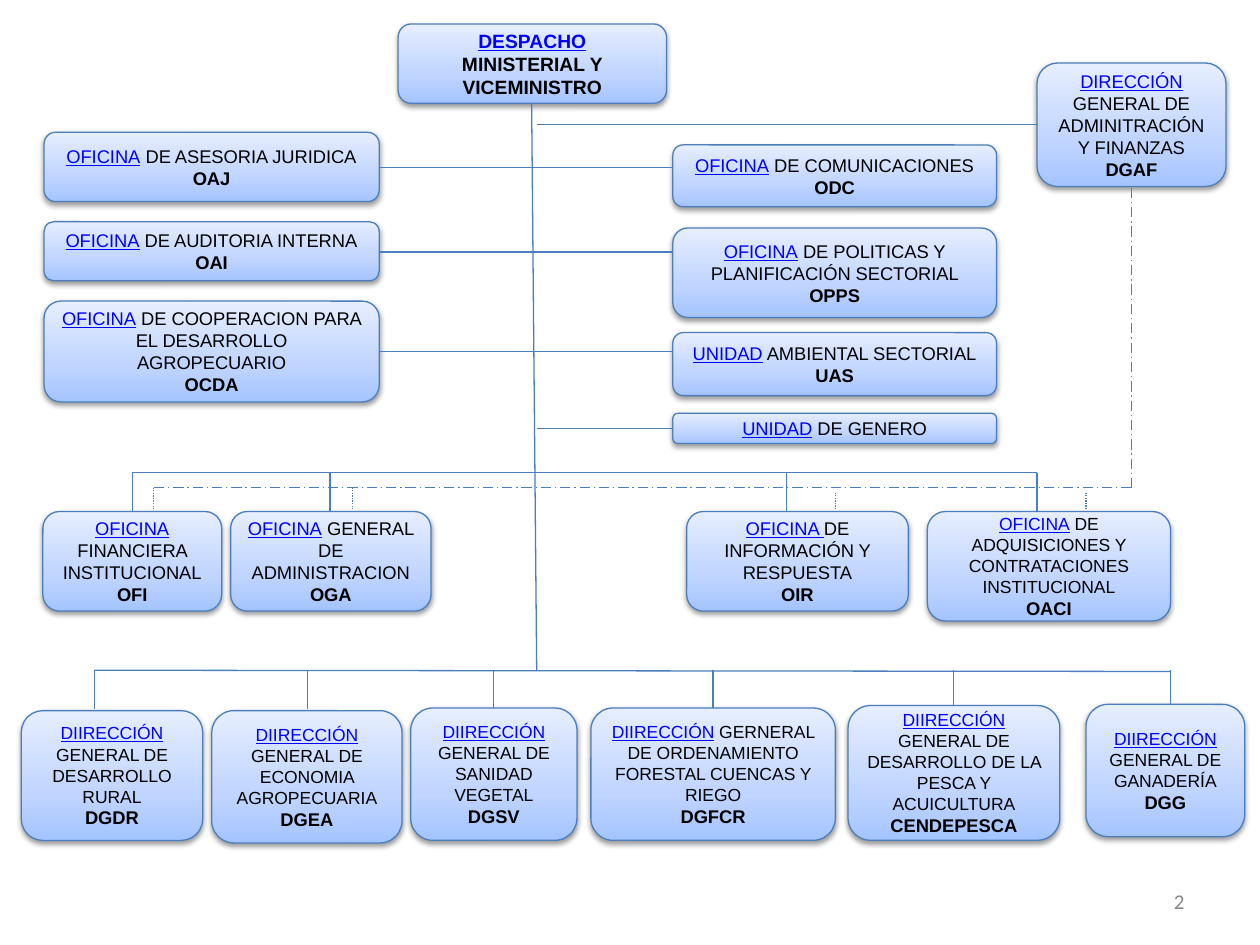
from lxml import etree
from pptx import Presentation
from pptx import util as u
from pptx.dml.color import RGBColor
from pptx.enum import dml, shapes, text
from pptx.oxml import parse_xml
from pptx.oxml.ns import qn

Pt = u.Pt
NS = 'xmlns:a="http://schemas.openxmlformats.org/drawingml/2006/main"'
BLUE, LINK, BLACK, GREY = "4B7EBC", "0000FF", "000000", "888888"
GRADIENT = [(0, "A4C4FF"), (35, "BFD4FF"), (100, "E6EEFF")]
DASH, DOT = dml.MSO_LINE.LONG_DASH_DOT, "sysDot"


def color(value):
    return RGBColor.from_string(value)


def add_line(slide, x1, y1, x2, y2, dash=None):
    line = slide.shapes.add_connector(
        shapes.MSO_CONNECTOR.STRAIGHT, Pt(x1), Pt(y1), Pt(x2), Pt(y2))
    line.line.color.rgb = color(BLUE)
    line.line.width = Pt(0.75)
    if dash == DOT:
        preset = etree.SubElement(line.line._get_or_add_ln(), qn("a:prstDash"))
        preset.set("val", DOT)
    elif dash:
        line.line.dash_style = dash
    etree.SubElement(line._element.spPr, qn("a:effectLst"))


def add_run(paragraph, words, size, value=BLACK, bold=False):
    run = paragraph.add_run()
    run.text = words
    font = run.font
    font.name, font.size, font.bold = "Arial", Pt(size), bold
    font.underline = value == LINK
    font.color.rgb = color(value)


def add_unit(slide, box, label, size=10.5, bold=False, inline=False):
    """Rounded box with a label of (underlined word, rest, short name)."""
    shape = slide.shapes.add_shape(
        shapes.MSO_SHAPE.ROUNDED_RECTANGLE, *[Pt(value) for value in box])
    shape.line.color.rgb = color(BLUE)
    shape.line.width = Pt(0.75)

    # Gradient running upward, and a soft shadow below
    stops = "".join(f'<a:gs pos="{place * 1000}"><a:srgbClr val="{value}"/></a:gs>'
                    for place, value in GRADIENT)
    properties = shape._element.spPr
    properties.find(qn("a:prstGeom")).addnext(parse_xml(
        f'<a:gradFill {NS} rotWithShape="1"><a:gsLst>{stops}</a:gsLst>'
        '<a:lin ang="16200000" scaled="0"/></a:gradFill>'))
    properties.append(parse_xml(
        f'<a:effectLst {NS}><a:outerShdw blurRad="{Pt(3.1)}" dist="{Pt(1.6)}" '
        'dir="5400000" rotWithShape="0"><a:srgbClr val="000000">'
        '<a:alpha val="38000"/></a:srgbClr></a:outerShdw></a:effectLst>'))

    frame = shape.text_frame
    frame.word_wrap = True
    frame.vertical_anchor = text.MSO_ANCHOR.MIDDLE
    paragraph = frame.paragraphs[0]
    link, rest, code = label
    add_run(paragraph, link, size, LINK, bold)
    add_run(paragraph, rest, size, bold=bold)
    if code:
        if not inline:
            paragraph = frame.add_paragraph()
        add_run(paragraph, code, 10.5, bold=True)
    for paragraph in frame.paragraphs:
        paragraph.alignment = text.PP_ALIGN.CENTER


def add_head(slide, box):
    left, top, width, height = box
    add_unit(slide, (left, top, 153.4, 45.4),
             ("DESPACHO", " MINISTERIAL Y VICEMINISTRO", ""), 11, bold=True)
    add_unit(slide, (left + width - 108, top + 22.3, 108, 70.6),
             ("DIRECCIÓN ", "GENERAL DE ADMINITRACIÓN Y FINANZAS", "DGAF"))
    # Trunk and the branch to finance
    add_line(slide, left + 76.3, top + 45.4, left + 79.2, top + height)
    add_line(slide, left + 79.2, top + 57.6, left + width - 108, top + 57.6)


def add_staff(slide, box):
    left, top, width, _ = box
    left_width, right_width = 191.5, 185
    right = left + width - right_width
    left_units = [
        (0, 39.6, ("OFICINA", " DE ASESORIA JURIDICA", "OAJ")),
        (51.1, 33.8, ("OFICINA", " DE AUDITORIA INTERNA", "OAI")),
        (96.5, 57.6, ("OFICINA", " DE COOPERACION PARA EL DESARROLLO AGROPECUARIO", "OCDA")),
    ]
    right_units = [
        (7.2, 35.3, ("OFICINA", " DE COMUNICACIONES", "ODC")),
        (54.7, 51.1, ("OFICINA", " DE POLITICAS Y PLANIFICACIÓN SECTORIAL ", "OPPS")),
        (114.5, 36, ("UNIDAD", " AMBIENTAL SECTORIAL", "UAS")),
        (160.6, 17.3, ("UNIDAD", " DE GENERO", "")),
    ]
    for x, unit_width, units in ((left, left_width, left_units),
                                 (right, right_width, right_units)):
        for y, height, label in units:
            add_unit(slide, (x, top + y, unit_width, height), label,
                     inline=label[2] == "OPPS")
    # Links across the trunk, the last one from the trunk itself
    for y in (20.2, 68.4, 125.3):
        add_line(slide, left + left_width, top + y, right, top + y)
    add_line(slide, left + 281.5, top + 169.2, right, top + 169.2)


def add_tier(slide, box, units, slope=0):
    """Row of units hanging from a bus along the top of the box.

    Each unit is (left, top, width, height, drop x, text size, label).
    """
    left, top, _, _ = box
    for x, y, width, height, drop, size, label in units:
        add_unit(slide, (left + x, top + y, width, height), label, size)
        add_line(slide, left + drop, top, left + drop, top + min(y, 22.3))
    add_line(slide, left + units[0][4], top, left + units[-1][4], top + slope)


def add_finance_links(slide, box):
    left, top, width, height = box
    right, bus, bottom = left + width, top + 171.3, top + height
    add_line(slide, right, top, right, bus, DASH)
    add_line(slide, right, bus, left, bus, DASH)
    for x, gap in ((0, 0), (113.8, 0), (389.6, 2.9), (532.8, 2.9)):
        add_line(slide, left + x, bus + gap, left + x, bottom, DOT)


def add_page_number(slide, box):
    frame = slide.shapes.add_textbox(*[Pt(value) for value in box]).text_frame
    frame.word_wrap = True
    frame.vertical_anchor = text.MSO_ANCHOR.MIDDLE
    paragraph = frame.paragraphs[0]
    paragraph.text = "2"
    paragraph.alignment = text.PP_ALIGN.RIGHT
    font = paragraph.font
    font.name, font.size = "Calibri", Pt(12)
    font.color.rgb = color(GREY)


OFFICES = [
    (0, 22.3, 102.2, 56.9, 51.1, 10.5, ("OFICINA", " FINANCIERA INSTITUCIONAL", "OFI")),
    (107.3, 22.3, 114.5, 56.9, 164.1, 10.5, ("OFICINA", " GENERAL DE ADMINISTRACION", "OGA")),
    (367.9, 22.3, 126.7, 56.9, 424.8, 10.5, ("OFICINA ", "DE INFORMACIÓN Y RESPUESTA", "OIR")),
    (505.4, 22.3, 139, 62.6, 568.1, 10,
     ("OFICINA", " DE ADQUISICIONES Y CONTRATACIONES INSTITUCIONAL", "OACI")),
]
DIRECTIONS = [
    (0, 23.1, 103.7, 74.2, 41.8, 10, ("DIIRECCIÓN", " GENERAL DE DESARROLLO RURAL", "DGDR")),
    (108.8, 23.1, 108.7, 75.6, 163.5, 10,
     ("DIIRECCIÓN", " GENERAL DE ECONOMIA AGROPECUARIA", "DGEA")),
    (222.5, 21.6, 95, 75.6, 270, 10, ("DIIRECCIÓN", " GENERAL DE SANIDAD VEGETAL", "DGSV")),
    (325.5, 21.6, 139.7, 75.6, 395.3, 10,
     ("DIIRECCIÓN", " GERNERAL DE ORDENAMIENTO FORESTAL CUENCAS Y RIEGO", "DGFCR")),
    (472.4, 20.2, 121, 77, 532.8, 10,
     ("DIIRECCIÓN", " GENERAL DE DESARROLLO DE LA PESCA Y ACUICULTURA", "CENDEPESCA")),
    (608.4, 19.5, 90.7, 75.6, 656.7, 10, ("DIIRECCIÓN", " GENERAL DE GANADERÍA", "DGG")),
]


def main():
    presentation = Presentation()
    presentation.slide_width, presentation.slide_height = Pt(720), Pt(540)
    slide = presentation.slides.add_slide(presentation.slide_layouts[6])
    add_head(slide, (227.5, 13.7, 473.1, 369.3))
    add_staff(slide, (25.2, 75.6, 544.3, 177.9))
    add_tier(slide, (24.5, 270, 644.4, 84.9), OFFICES)
    add_tier(slide, (12.2, 383, 699.1, 98.7), DIRECTIONS, slope=0.7)
    add_finance_links(slide, (87.8, 107.3, 558.8, 185))
    add_page_number(slide, (516.2, 500.4, 167.8, 28.8))
    presentation.save("out.pptx")


if __name__ == "__main__":
    main()
